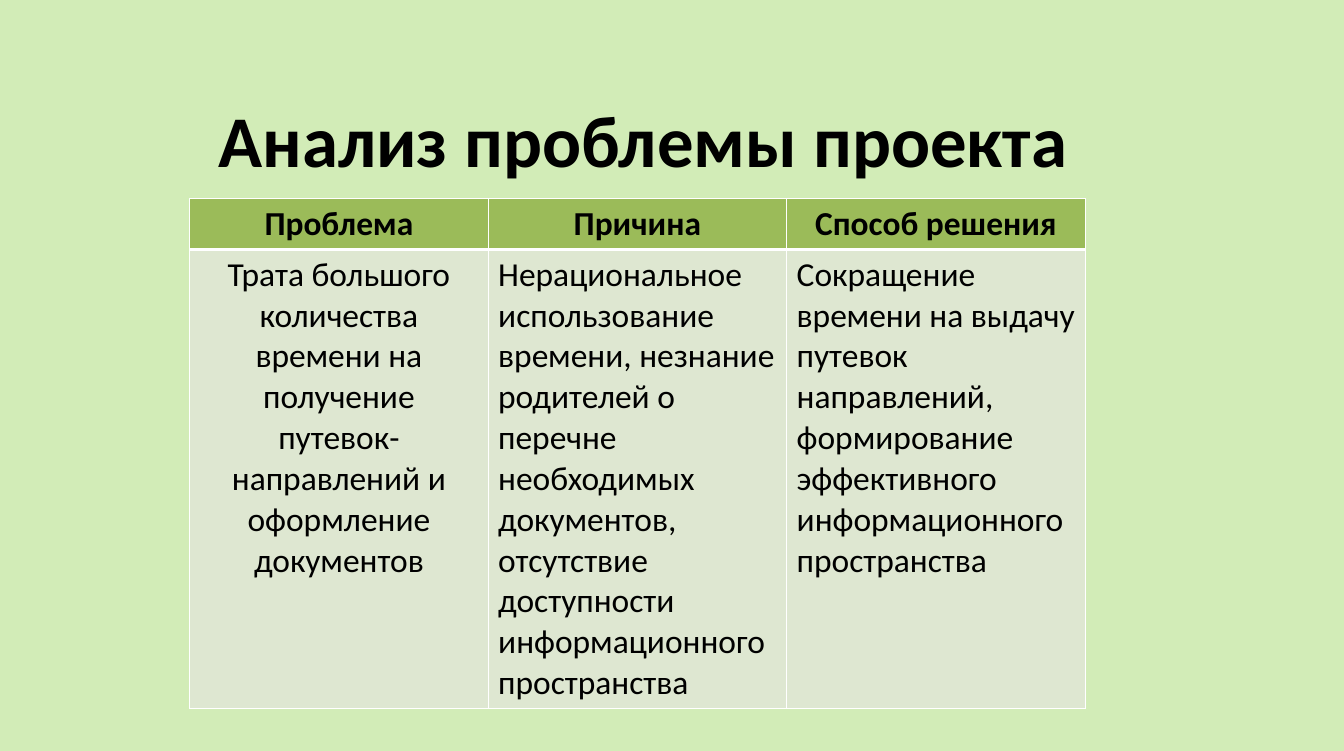
from dataclasses import dataclass
from typing import NamedTuple

from lxml.etree import SubElement
from pptx import Presentation
from pptx.dml.color import RGBColor
from pptx.enum.text import MSO_ANCHOR, PP_ALIGN
from pptx.oxml.ns import qn
from pptx.util import Cm, Pt


@dataclass(frozen=True)
class Theme:
    font: str = "Calibri"
    background: str = "D2ECB7"
    text: str = "000000"
    header_fill: str = "9BBB59"
    body_fill: str = "DEE7D1"
    border: str = "FFFFFF"
    title_size: float = 52.2
    table_size: float = 24
    thin: float = 1
    thick: float = 3


class Box(NamedTuple):
    left: float
    top: float
    width: float
    height: float

    def lengths(self):
        return [Cm(value) for value in self]


THEME = Theme()
HEADER_HEIGHT = 1.28
COLUMNS = [
    ("Проблема", "Трата большого количества времени на получение "
     "путевок-направлений и оформление документов", PP_ALIGN.CENTER),
    ("Причина", "Нерациональное использование времени, незнание родителей "
     "о перечне необходимых документов, отсутствие доступности "
     "информационного пространства", PP_ALIGN.LEFT),
    ("Способ решения", "Сокращение времени на выдачу путевок направлений, "
     "формирование эффективного информационного пространства", PP_ALIGN.LEFT),
]


def write_text(frame, text, size, bold=False, align=PP_ALIGN.LEFT):
    frame.word_wrap = True
    para = frame.paragraphs[0]
    para.alignment = align
    span = para.add_run()
    span.text = text
    span.font.name = THEME.font
    span.font.size = Pt(size)
    span.font.bold = bold
    span.font.color.rgb = RGBColor.from_string(THEME.text)


def set_borders(cell, **widths):
    properties = cell._tc.get_or_add_tcPr()
    for side in ("L", "R", "T", "B"):
        width = widths.get(side, THEME.thin)
        line = SubElement(properties, qn(f"a:ln{side}"), w=str(Pt(width)))
        fill = SubElement(line, qn("a:solidFill"))
        SubElement(fill, qn("a:srgbClr"), val=THEME.border)


def fill_cell(cell, text, color, bold, align, **borders):
    set_borders(cell, **borders)
    cell.fill.solid()
    cell.fill.fore_color.rgb = RGBColor.from_string(color)
    write_text(cell.text_frame, text, THEME.table_size, bold=bold, align=align)


def add_title(page, box, text):
    frame = page.shapes.add_textbox(*box.lengths()).text_frame
    frame.vertical_anchor = MSO_ANCHOR.MIDDLE
    write_text(frame, text, THEME.title_size, bold=True, align=PP_ALIGN.CENTER)


def add_analysis_table(page, box, columns):
    table = page.shapes.add_table(2, len(columns), *box.lengths()).table
    table.rows[0].height = Cm(HEADER_HEIGHT)
    table.rows[1].height = Cm(box.height - HEADER_HEIGHT)
    for index, (heading, body, align) in enumerate(columns):
        table.columns[index].width = Cm(box.width / len(columns))
        fill_cell(table.cell(0, index), heading, THEME.header_fill, True,
                  PP_ALIGN.CENTER, B=THEME.thick)
        fill_cell(table.cell(1, index), body, THEME.body_fill, False,
                  align, T=THEME.thick)


def main():
    deck = Presentation()
    deck.slide_width, deck.slide_height = Cm(34.01), Cm(19)
    page = deck.slides.add_slide(deck.slide_layouts[6])
    page.background.fill.solid()
    page.background.fill.fore_color.rgb = RGBColor.from_string(THEME.background)
    add_title(page, Box(0.97, 2.31, 30.61, 2.39), "Анализ проблемы проекта")
    add_analysis_table(page, Box(4.8, 5.03, 22.66, 12.9), COLUMNS)
    deck.save("out.pptx")


if __name__ == "__main__":
    main()
